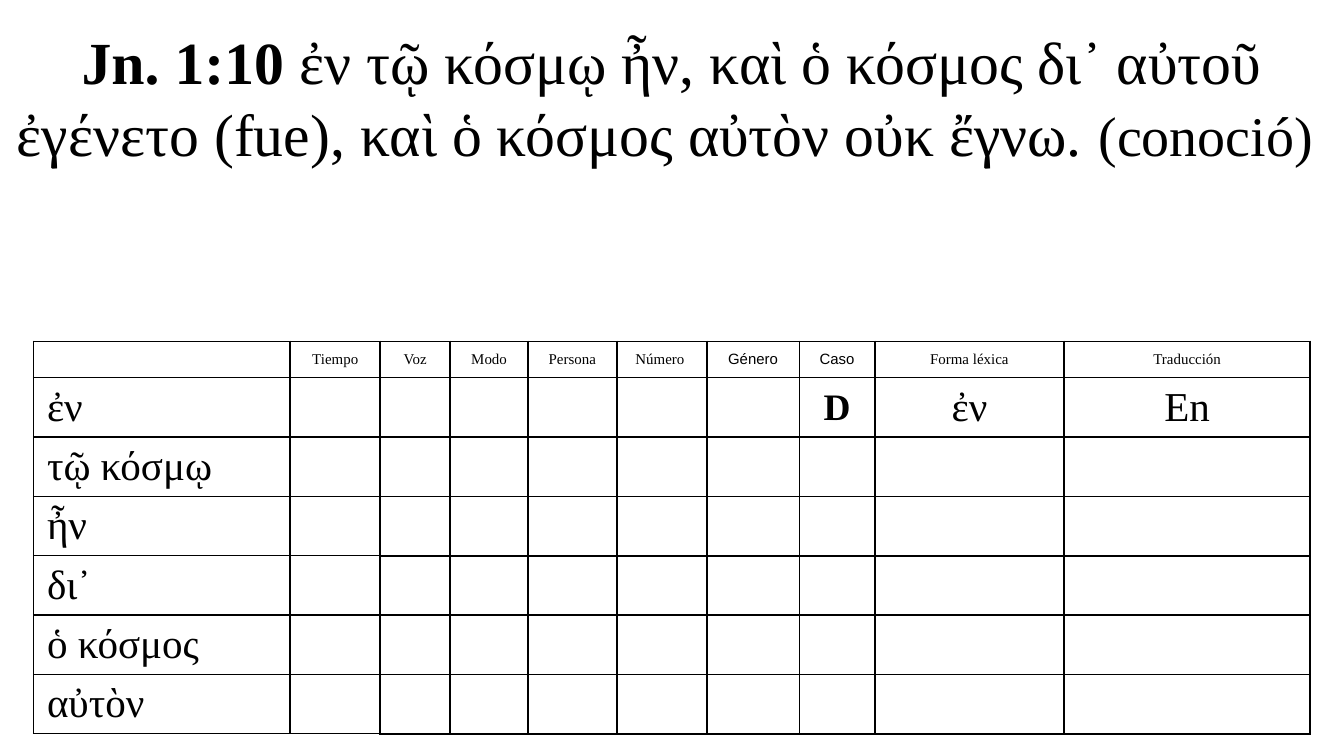
"""Build the Greek parsing worksheet for Jn. 1:10."""
from lxml import etree
from pptx import Presentation
from pptx.dml.color import RGBColor
from pptx.enum.text import MSO_ANCHOR, PP_ALIGN
from pptx.oxml.ns import qn
from pptx.util import Inches, Pt

BLACK = RGBColor(0, 0, 0)
MIDDLE = MSO_ANCHOR.MIDDLE
CENTER, LEFT = PP_ALIGN.CENTER, PP_ALIGN.LEFT
SERIF, SANS = "Times New Roman", "Arial"

COLUMNS = [1.91, 0.67, 0.52, 0.58, 0.66, 0.67, 0.69, 0.56, 1.41, 1.83]
ROWS = [0.27] + [0.44] * 6
HEADINGS = ["", "Tiempo", "Voz", "Modo", "Persona", "Número ", "Género", "Caso",
            "Forma léxica", "Traducción"]
WORDS = ["ἐν", "τῷ κόσμῳ", "ἦν", "δι᾿", "ὁ κόσμος", "αὐτὸν"]
SANS_HEADINGS = ("Género", "Caso")
ANSWERS = {(1, 7): "D", (1, 8): "ἐν", (1, 9): "En"}
VERSE = [
    ("Jn. 1:10", {"size": Pt(32), "bold": True}),
    (" ἐν τῷ κόσμῳ ἦν, καὶ ὁ κόσμος δι᾿ αὐτοῦ ἐγένετο (fue), "
     "καὶ ὁ κόσμος αὐτὸν οὐκ ἔγνω. ", {"size": Pt(32), "bold": False}),
    ("(conoció) ", {"size": Pt(30), "bold": False}),
]


def add_run(paragraph, text, style):
    run = paragraph.add_run()
    run.text = text
    run.font.color.rgb = BLACK
    for name, value in {"name": SERIF, **style}.items():
        setattr(run.font, name, value)


def add_border(cell, side, points):
    line = etree.SubElement(cell._tc.get_or_add_tcPr(), qn(f"a:ln{side}"), w=str(Pt(points)))
    fill = etree.SubElement(line, qn("a:solidFill"))
    etree.SubElement(fill, qn("a:srgbClr"), val=str(BLACK))


deck = Presentation()
deck.slide_width = Inches(10)
deck.slide_height = deck.slide_width * 9 // 16
blank = deck.slide_layouts[6]
slide = deck.slides.add_slide(blank)

verse = slide.shapes.add_textbox(0, Inches(0.13), deck.slide_width, Inches(1.18)).text_frame
verse.word_wrap = True
verse.vertical_anchor = MIDDLE
verse.paragraphs[0].alignment = CENTER
for text, style in VERSE:
    add_run(verse.paragraphs[0], text, style)

parsing = slide.shapes.add_table(len(ROWS), len(COLUMNS), Inches(0.25), Inches(2.54),
                                 Inches(sum(COLUMNS)), Inches(sum(ROWS))).table
parsing.first_row = parsing.horz_banding = False
for column, width in zip(parsing.columns, COLUMNS):
    column.width = Inches(width)
for row, height in zip(parsing.rows, ROWS):
    row.height = Inches(height)

for r in range(len(ROWS)):
    for c in range(len(COLUMNS)):
        cell = parsing.cell(r, c)
        thin = 0.75 if c < 2 else 1
        for side, points in {"L": 1, "R": 1, "T": thin if r else 1, "B": thin}.items():
            add_border(cell, side, points)
        cell.fill.background()
        margins = {"margin_left": Pt(7.2), "margin_right": Pt(7.2),
                   "margin_top": Pt(2.7), "margin_bottom": Pt(2.7)}
        for name, inset in margins.items():
            setattr(cell, name, inset)
        cell.vertical_anchor = MIDDLE

        entry = cell.text_frame.paragraphs[0]
        entry.alignment = LEFT if c == 0 else CENTER
        if r == 0:
            text = HEADINGS[c]
            style = {"size": Pt(8), "name": SANS if text in SANS_HEADINGS else SERIF}
        else:
            text = WORDS[r - 1] if c == 0 else ANSWERS.get((r, c), "")
            style = {"size": Pt(20 if text == "D" else 22), "bold": text == "D"}
        if text:
            add_run(entry, text, style)
        else:
            etree.SubElement(entry._p, qn("a:endParaRPr"), sz="800")

deck.save("out.pptx")
